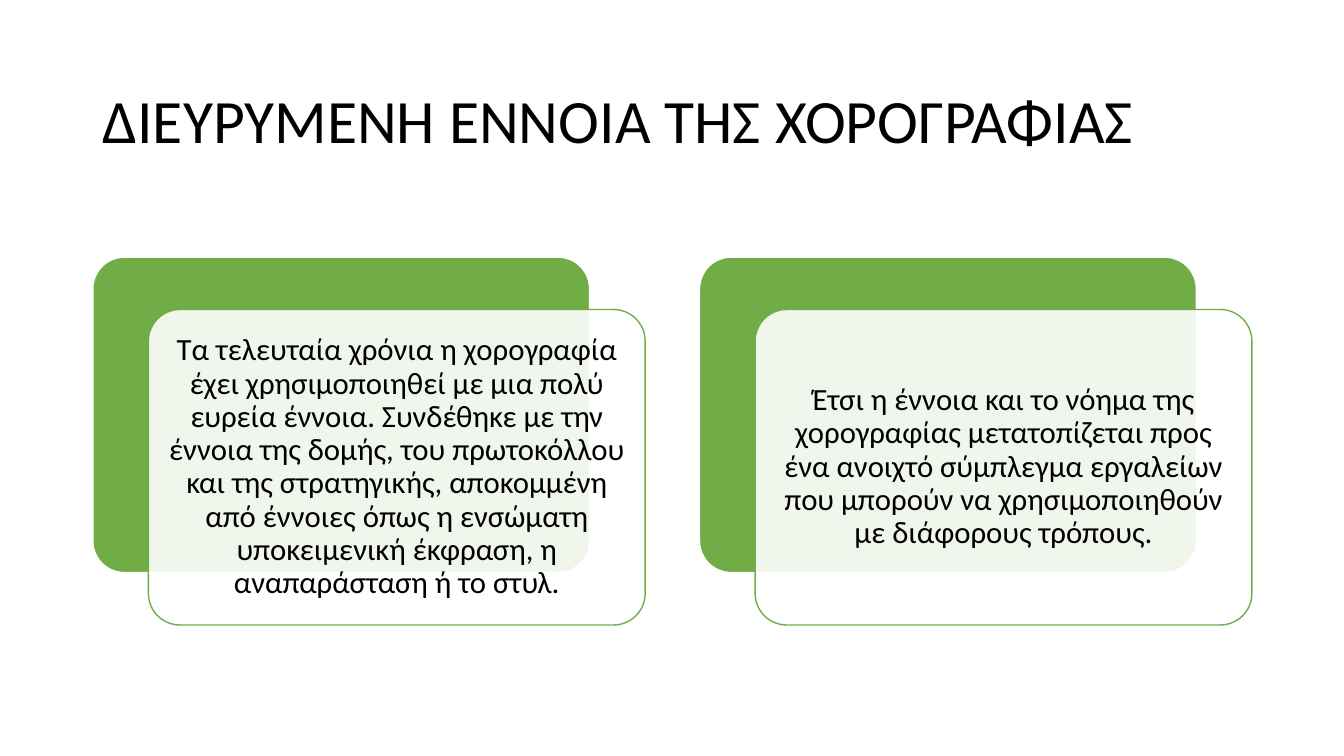
from lxml import etree
from pptx import Presentation
from pptx import util as u
from pptx.dml.color import RGBColor
from pptx.enum import shapes, text
from pptx.oxml.ns import qn

TITLE = "ΔΙΕΥΡΥΜΕΝΗ ΕΝΝΟΙΑ ΤΗΣ ΧΟΡΟΓΡΑΦΙΑΣ"
IDEAS = [
    "Τα τελευταία χρόνια η χορογραφία έχει χρησιμοποιηθεί με μια πολύ ευρεία έννοια. "
    "Συνδέθηκε με την έννοια της δομής, του πρωτοκόλλου και της στρατηγικής, "
    "αποκομμένη από έννοιες όπως η ενσώματη υποκειμενική έκφραση, "
    "η αναπαράσταση ή το στυλ.",
    "Έτσι η έννοια και το νόημα της χορογραφίας μετατοπίζεται προς ένα ανοιχτό "
    "σύμπλεγμα εργαλείων που μπορούν να χρησιμοποιηθούν με διάφορους τρόπους.",
]
GREEN, WHITE, BLACK = "70AD47", "FFFFFF", "000000"
LEFT, TOP = 2.34, 6.48
CARD_W, CARD_H = 12.52, 7.95
STEP = 15.29
SHIFT_X, SHIFT_Y = 1.4, 1.32
INSET = 0.23


def color(value):
    return RGBColor.from_string(value)


def add_text(slide, words, left, top, width, height, *, size,
             align=text.PP_ALIGN.LEFT, inset_x=INSET, inset_y=INSET):
    box = slide.shapes.add_textbox(u.Cm(left), u.Cm(top), u.Cm(width), u.Cm(height))
    frame = box.text_frame
    frame.word_wrap = True
    frame.vertical_anchor = text.MSO_ANCHOR.MIDDLE
    frame.margin_left = frame.margin_right = u.Cm(inset_x)
    frame.margin_top = frame.margin_bottom = u.Cm(inset_y)
    line = frame.paragraphs[0]
    line.alignment = align
    line.line_spacing = 0.9
    run = line.add_run()
    run.text = words
    run.font.name = "Calibri"
    run.font.size = u.Pt(size)
    run.font.color.rgb = color(BLACK)


def add_card(slide, left, top, fill, outline, opacity=100):
    card = slide.shapes.add_shape(shapes.MSO_SHAPE.ROUNDED_RECTANGLE,
                                  u.Cm(left), u.Cm(top), u.Cm(CARD_W), u.Cm(CARD_H))
    card.adjustments[0] = 0.1
    card.shadow.inherit = False
    card.fill.solid()
    card.fill.fore_color.rgb = color(fill)
    card.line.color.rgb = color(outline)
    card.line.width = u.Pt(1)
    if opacity < 100:
        shade = card.fill._xPr.find(qn("a:solidFill"))[0]
        etree.SubElement(shade, qn("a:alpha"), val=str(opacity * 1000))


def main():
    deck = Presentation()
    deck.slide_width, deck.slide_height = u.Cm(33.87), u.Cm(19.05)
    slide = deck.slides.add_slide(deck.slide_layouts[6])
    add_text(slide, TITLE, LEFT, 1.55, 29.21, 3.15, size=44, inset_x=0.25, inset_y=0.13)
    for column, idea in enumerate(IDEAS):
        left = LEFT + column * STEP
        front_left, front_top = left + SHIFT_X, TOP + SHIFT_Y
        add_card(slide, left, TOP, GREEN, WHITE)
        add_card(slide, front_left, front_top, WHITE, GREEN, opacity=90)
        add_text(slide, idea, front_left + INSET, front_top + INSET,
                 CARD_W - 2 * INSET, CARD_H - 2 * INSET,
                 size=22, align=text.PP_ALIGN.CENTER)
    deck.save("out.pptx")


if __name__ == "__main__":
    main()
